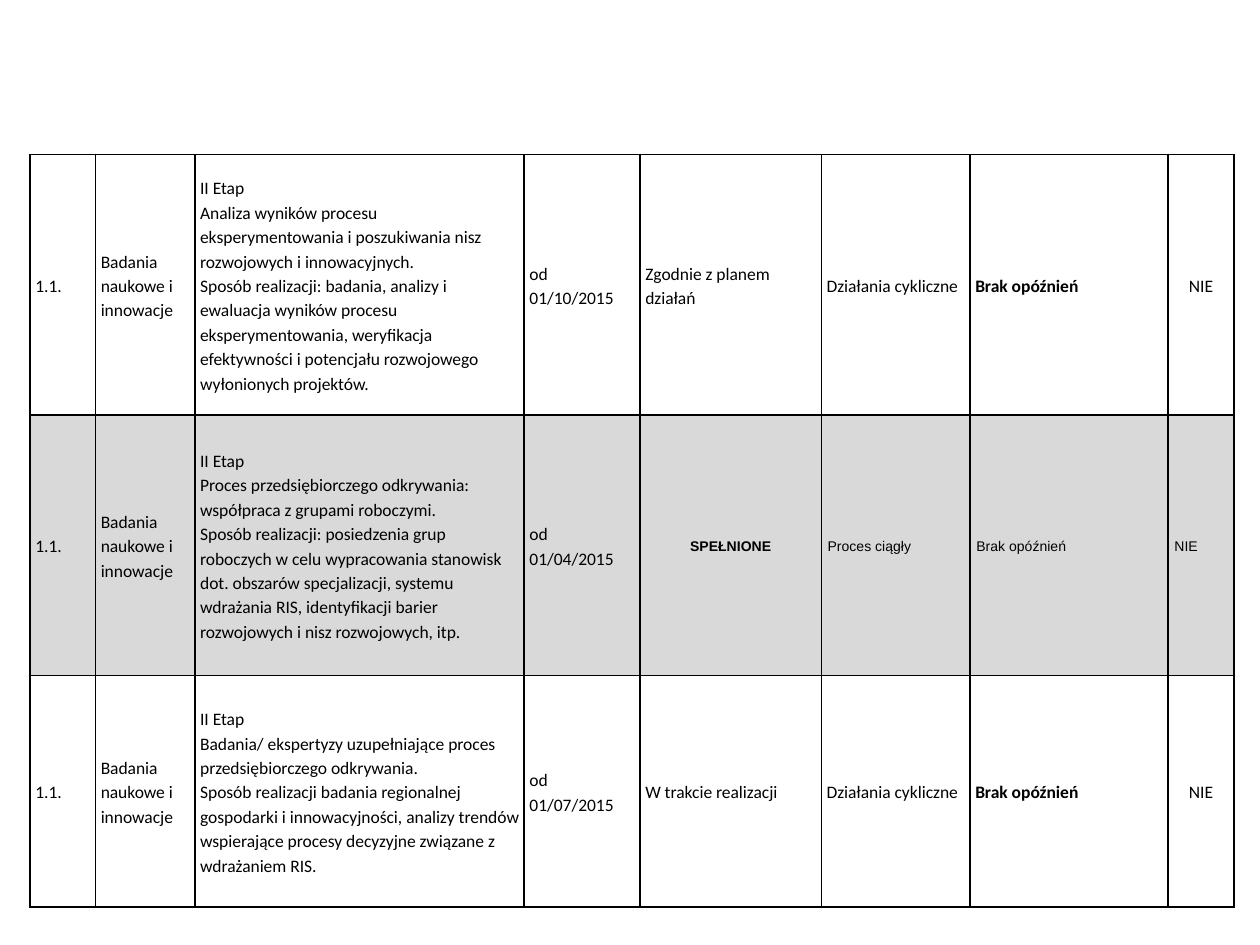
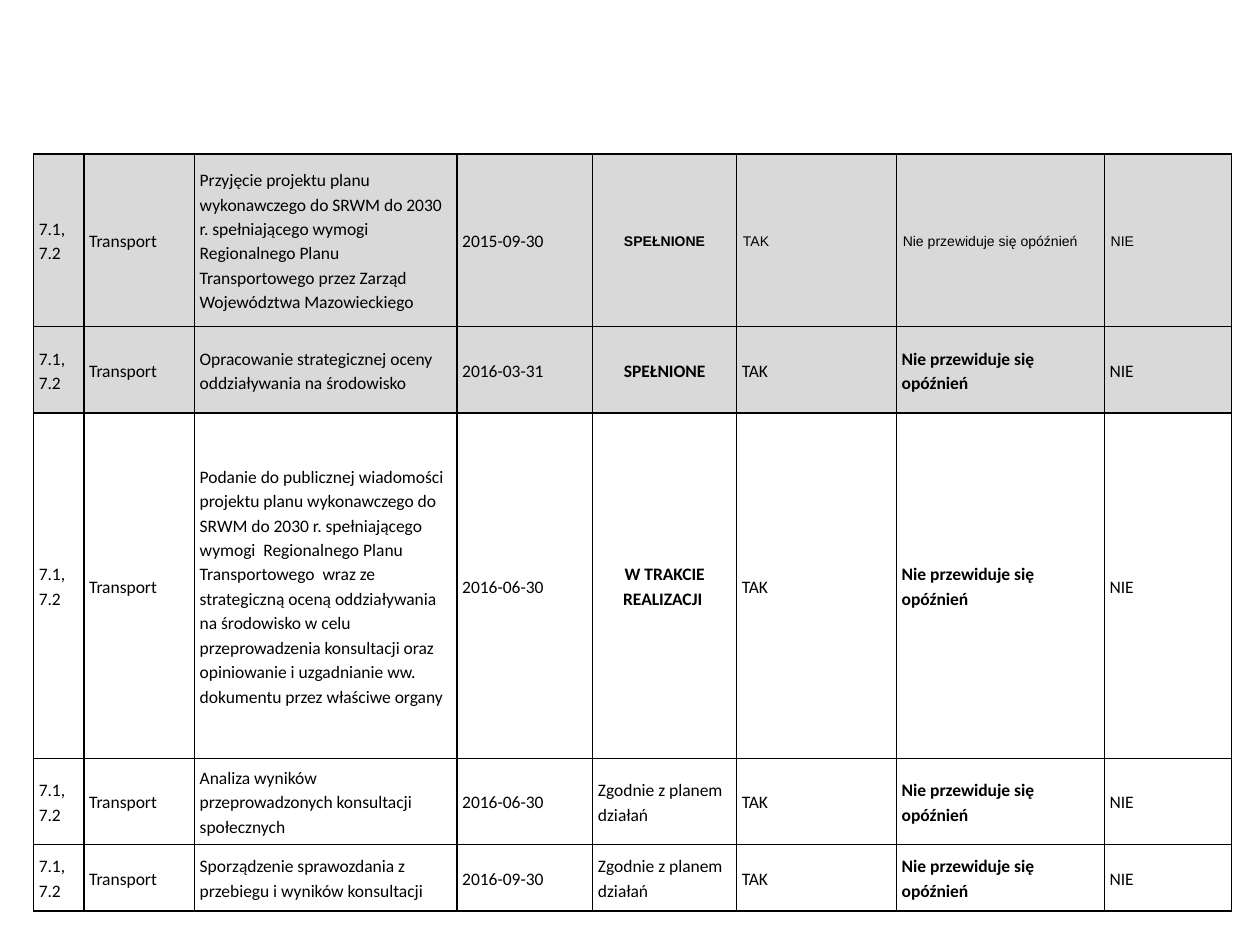
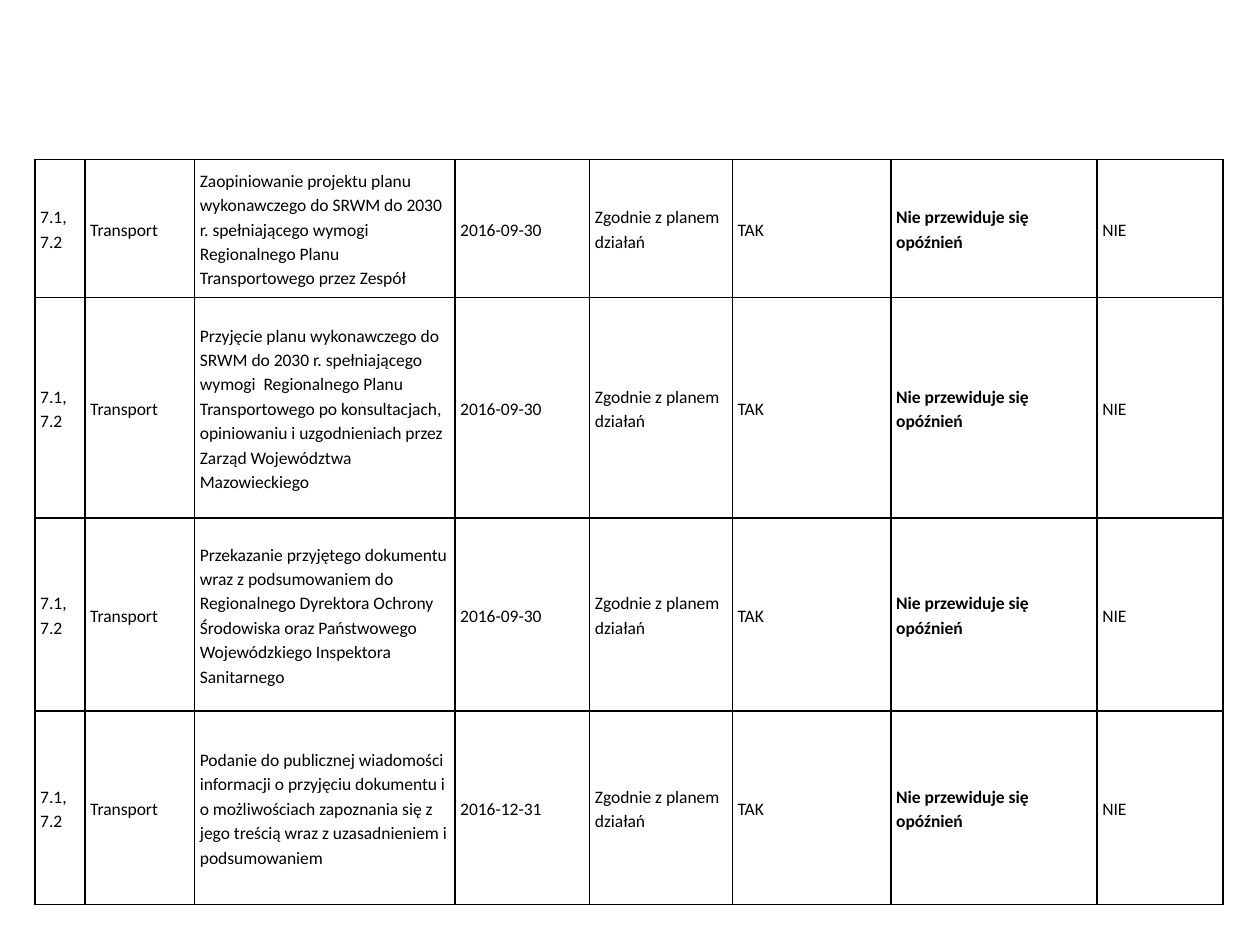
import pptx
import pptx.dml.color
import pptx.enum.text
import pptx.oxml
import pptx.oxml.ns
import pptx.util

Pt = pptx.util.Pt
ALIGN = pptx.enum.text.PP_ALIGN
BLACK = pptx.dml.color.RGBColor(0x00, 0x00, 0x00)
GREY = pptx.dml.color.RGBColor(0xD9, 0xD9, 0xD9)

BODY = {"name": "Calibri", "size": Pt(10), "bold": False}
BOLD = {**BODY, "bold": True}
SMALL = {"name": "Arial", "size": Pt(8), "bold": False}
LOUD = {**SMALL, "bold": True}
LEFT = {"alignment": ALIGN.LEFT, "line_spacing": 1.15}
MID = {**LEFT, "alignment": ALIGN.CENTER}
APART = {**LEFT, "space_after": Pt(10)}
TIGHT = {"margin_left": Pt(3), "margin_right": Pt(3)}
WIDE = {"margin_left": Pt(3.6), "margin_right": Pt(3.6)}
FRAME = {
    "margin_top": 0,
    "margin_bottom": 0,
    "vertical_anchor": pptx.enum.text.MSO_ANCHOR.MIDDLE,
}
STYLES = {
    "p": (BODY, LEFT, TIGHT),
    "b": (BOLD, LEFT, TIGHT),
    "c": (BODY, MID, TIGHT),
    "m": (BOLD, MID, TIGHT),
    "t": (LOUD, {**APART, "alignment": ALIGN.CENTER}, WIDE),
    "s": (SMALL, APART, WIDE),
    "j": (SMALL, {**APART, "alignment": ALIGN.JUSTIFY}, WIDE),
}

PLAN = "Zgodnie z planem działań"
DONE = "SPEŁNIONE"
CYCLE = "Działania cykliczne"
STUDY = [37.4, 56.8, 188.2, 66.2, 103.6, 85, 113.2, 37.6]
ROAD = [28.8, 63.2, 150, 77.6, 82.2, 91.4, 118.8, 72.6]


def put(item, values):
    """Set every attribute named in a dict."""
    for name, value in values.items():
        setattr(item, name, value)


def edge(cell):
    """Draw a thin black line on each side of a cell."""
    props = cell._tc.get_or_add_tcPr()
    for side in ("lnL", "lnR", "lnT", "lnB"):
        props.append(pptx.oxml.parse_xml(
            f'<a:{side} {pptx.oxml.ns.nsdecls("a")} w="12700">'
            f'<a:solidFill><a:srgbClr val="{BLACK}"/></a:solidFill></a:{side}>'
        ))


def fill(cell, text, style, grey):
    """Write one cell in the given style."""
    font, para, sides = STYLES[style]
    put(cell, {**FRAME, **sides})
    edge(cell)
    if grey:
        cell.fill.solid()
        cell.fill.fore_color.rgb = GREY
    else:
        cell.fill.background()
    first = cell.text_frame.paragraphs[0]
    put(first, para)
    for index, line in enumerate(text.split("\n")):
        if index:
            first.add_line_break()
        run = first.add_run()
        run.text = line
        put(run.font, font)
        run.font.color.rgb = BLACK


def grid(slide, box, shares, rows):
    """Fill a box with a table whose columns share its width."""
    left, top, width = box
    high = sum(row[0] for row in rows)
    table = slide.shapes.add_table(
        len(rows), len(shares), Pt(left), Pt(top), Pt(width), Pt(high)
    ).table
    put(table, {"first_row": False, "horz_banding": False})
    for column, share in zip(table.columns, shares):
        column.width = Pt(width * share / sum(shares))
    for line, (height, looks, grey, texts) in zip(table.rows, rows):
        line.height = Pt(height)
        for cell, text, look in zip(line.cells, texts, looks):
            fill(cell, text, look, grey)


def study(height, task, date, state, cycle=CYCLE, looks="ppppppbc", grey=False):
    """Return a row on research and innovation."""
    return height, looks, grey, (
        "1.1.", "Badania naukowe i innowacje", "II Etap\n" + task,
        "od " + date, state, cycle, "Brak opóźnień", "NIE",
    )


def road(height, task, date, state=PLAN, looks="ppppppbp", grey=False):
    """Return a row on transport."""
    return height, looks, grey, (
        "7.1, 7.2", "Transport", task, date, state, "TAK",
        "Nie przewiduje się opóźnień", "NIE",
    )


PAGES = [
    ((17.2, 88.4, 688), STUDY, [
        study(
            148.8,
            "Analiza wyników procesu eksperymentowania i poszukiwania nisz "
            "rozwojowych i innowacyjnych. \n"
            "Sposób realizacji: badania, analizy i ewaluacja wyników procesu "
            "eksperymentowania, weryfikacja efektywności i potencjału "
            "rozwojowego wyłonionych projektów.",
            "01/10/2015", PLAN,
        ),
        study(
            148.8,
            "Proces przedsiębiorczego odkrywania: współpraca z grupami "
            "roboczymi. \n"
            "Sposób realizacji: posiedzenia grup roboczych w celu wypracowania "
            "stanowisk dot. obszarów specjalizacji, systemu wdrażania RIS, "
            "identyfikacji barier rozwojowych i nisz rozwojowych, itp.",
            "01/04/2015", DONE, "Proces ciągły", "pppptsjj", True,
        ),
        study(
            132.4,
            "Badania/ ekspertyzy uzupełniające proces przedsiębiorczego "
            "odkrywania. \n"
            "Sposób realizacji badania regionalnej gospodarki i "
            "innowacyjności, analizy trendów wspierające procesy decyzyjne "
            "związane z wdrażaniem RIS.",
            "01/07/2015", "W trakcie realizacji",
        ),
    ]),
    ((19.2, 88, 684.6), ROAD, [
        road(
            98.6,
            "Przyjęcie projektu planu wykonawczego do SRWM do 2030 r. "
            "spełniającego wymogi  Regionalnego Planu Transportowego przez "
            "Zarząd Województwa Mazowieckiego",
            "2015-09-30", DONE, "pppptsjj", True,
        ),
        road(
            49.4,
            "Opracowanie strategicznej oceny oddziaływania na środowisko",
            "2016-03-31", DONE, "ppppmpbp", True,
        ),
        road(
            197.4,
            "Podanie do publicznej wiadomości projektu planu wykonawczego do "
            "SRWM do 2030 r. spełniającego wymogi  Regionalnego Planu "
            "Transportowego  wraz ze strategiczną oceną oddziaływania na "
            "środowisko w celu przeprowadzenia konsultacji oraz opiniowanie i "
            "uzgadnianie ww. dokumentu przez właściwe organy",
            "2016-06-30", "W TRAKCIE REALIZACJI ", "ppppmpbp",
        ),
        road(
            49.2,
            "Analiza wyników przeprowadzonych konsultacji społecznych",
            "2016-06-30",
        ),
        road(
            38,
            "Sporządzenie sprawozdania z przebiegu i wyników konsultacji",
            "2016-09-30",
        ),
    ]),
    ((20, 91.2, 679), ROAD, [
        road(
            78.8,
            "Zaopiniowanie projektu planu wykonawczego do SRWM do 2030 r. "
            "spełniającego wymogi  Regionalnego Planu Transportowego przez "
            "Zespół",
            "2016-09-30",
        ),
        road(
            126,
            "Przyjęcie planu wykonawczego do SRWM do 2030 r. spełniającego "
            "wymogi  Regionalnego Planu Transportowego po konsultacjach, "
            "opiniowaniu i uzgodnieniach przez Zarząd Województwa "
            "Mazowieckiego",
            "2016-09-30",
        ),
        road(
            110.4,
            "Przekazanie przyjętego dokumentu wraz z podsumowaniem do "
            "Regionalnego Dyrektora Ochrony Środowiska oraz Państwowego "
            "Wojewódzkiego Inspektora Sanitarnego",
            "2016-09-30",
        ),
        road(
            110.4,
            "Podanie do publicznej wiadomości informacji o przyjęciu dokumentu "
            "i o możliwościach zapoznania się z jego treścią wraz z "
            "uzasadnieniem i podsumowaniem",
            "2016-12-31",
        ),
    ]),
]


def main():
    """Build the deck and save it."""
    deck = pptx.Presentation()
    put(deck, {"slide_width": Pt(720), "slide_height": Pt(540)})
    for box, shares, rows in PAGES:
        grid(deck.slides.add_slide(deck.slide_layouts[6]), box, shares, rows)
    deck.save("out.pptx")


if __name__ == "__main__":
    main()
